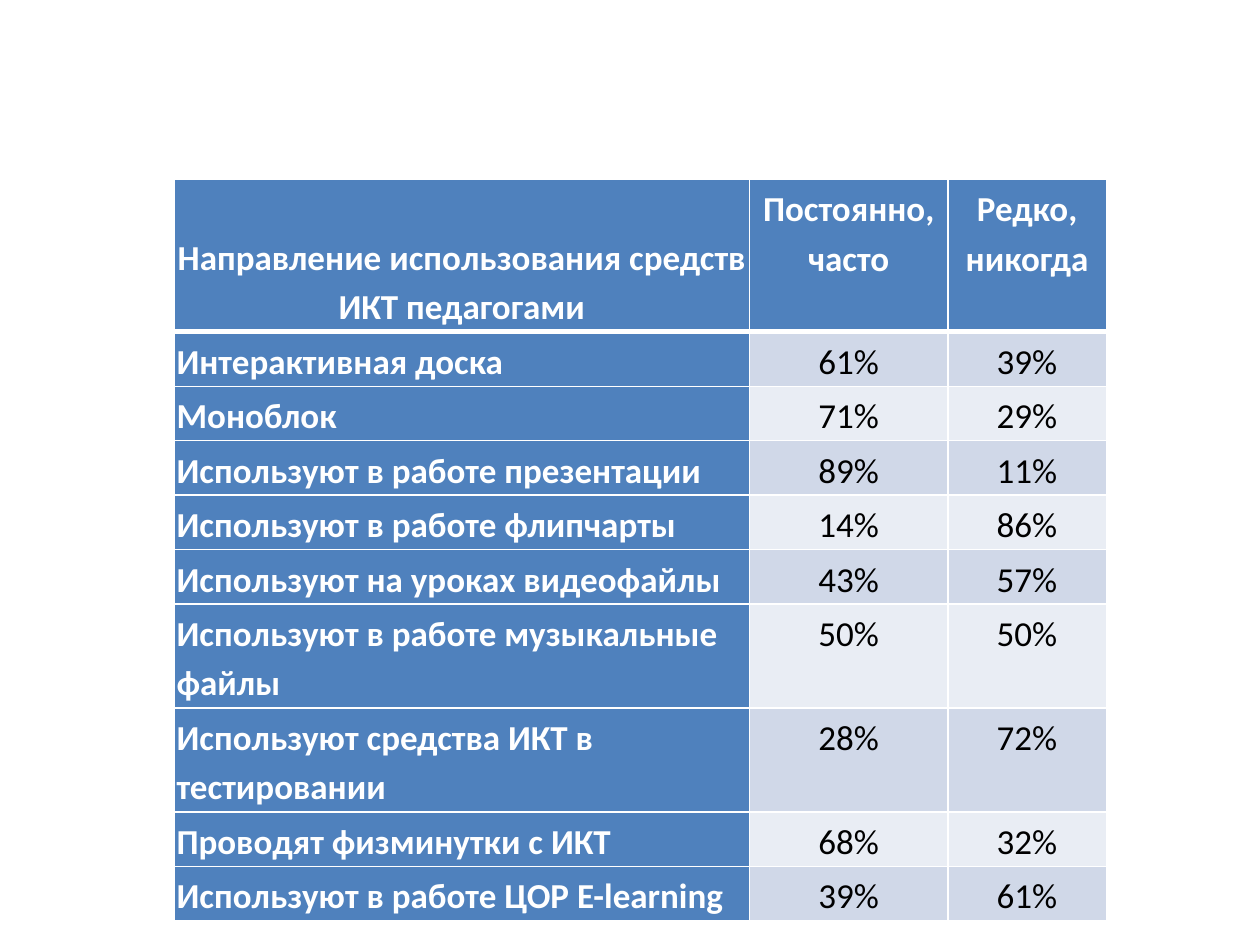
"""Build a slide with a table on how teachers use ICT tools."""
import pptx
import pptx.dml.color
import pptx.enum.text
import pptx.util
import lxml.etree

Pt = pptx.util.Pt
ALIGN = pptx.enum.text.PP_ALIGN
ANCHOR = pptx.enum.text.MSO_ANCHOR
HUES = {"head": "4F81BD", "odd": "D0D8E8", "even": "E9EDF4",
        "white": "FFFFFF", "black": "000000"}
HEAD = ["Направление использования средств ИКТ педагогами",
        "Постоянно, часто", "Редко, никогда"]
USES = [
    ("Интерактивная доска", 61),
    ("Моноблок", 71),
    ("Используют в работе презентации", 89),
    ("Используют в работе флипчарты", 14),
    ("Используют на уроках видеофайлы", 43),
    ("Используют в работе музыкальные файлы", 50),
    ("Используют средства ИКТ в тестировании", 28),
    ("Проводят физминутки с ИКТ", 68),
    ("Используют в работе ЦОР E-learning", 39),
]
WIDE = [329, 113.2, 90.6]
HIGH = [87] + [31.1] * 5 + [59.4] * 2 + [31.1] * 2


class Deck:
    """Hold the style and the current slide."""

    def __init__(self, font, size):
        self.font, self.size = font, size
        self.show = pptx.Presentation()
        self.show.slide_width, self.show.slide_height = Pt(720), Pt(540)
        self.slide = self.show.slides.add_slide(self.show.slide_layouts[6])

    def hue(self, name):
        """Return the named colour."""
        return pptx.dml.color.RGBColor.from_string(HUES[name])

    def edge(self, cell, side, width):
        """Draw one white border of a cell."""
        props = cell._tc.get_or_add_tcPr()
        tag = pptx.oxml.ns.qn
        line = lxml.etree.SubElement(props, tag(f"a:ln{side}"), w=str(Pt(width)))
        fill = lxml.etree.SubElement(line, tag("a:solidFill"))
        lxml.etree.SubElement(fill, tag("a:srgbClr"), val=HUES["white"])

    def cell(self, cell, text, row, col):
        """Fill and format one cell."""
        dark = row == 0 or col == 0
        for side in "LRTB":
            thick = (row, side) in ((0, "B"), (1, "T"))
            self.edge(cell, side, 3 if thick else 1)
        cell.fill.solid()
        band = "odd" if row % 2 else "even"
        cell.fill.fore_color.rgb = self.hue("head" if dark else band)
        cell.margin_left = cell.margin_right = Pt(1.5)
        cell.margin_top = cell.margin_bottom = Pt(1.5)
        low = row == 0 and col == 0
        cell.vertical_anchor = ANCHOR.BOTTOM if low else ANCHOR.TOP
        cell.text = text
        para = cell.text_frame.paragraphs[0]
        para.alignment = ALIGN.CENTER if row == 0 or col else ALIGN.LEFT
        para.line_spacing = 1.15
        font = para.font
        font.name, font.size, font.bold = self.font, Pt(self.size), dark
        font.color.rgb = self.hue("white" if dark else "black")

    def table(self, left, top, wide, high, data):
        """Add a table with the given column widths and row heights."""
        grid = self.slide.shapes.add_table(
            len(high), len(wide), Pt(left), Pt(top), Pt(sum(wide)), Pt(sum(high))).table
        for col, width in zip(grid.columns, wide):
            col.width = Pt(width)
        for row, height in zip(grid.rows, high):
            row.height = Pt(height)
        for r, line in enumerate(data):
            for c, text in enumerate(line):
                self.cell(grid.cell(r, c), text, r, c)


def main():
    """Build and save the slide."""
    deck = Deck("Calibri", 20)
    rows = [[name, f"{often}%", f"{100 - often}%"] for name, often in USES]
    deck.table(99.4, 102.6, WIDE, HIGH, [HEAD] + rows)
    deck.show.save("out.pptx")


if __name__ == "__main__":
    main()
